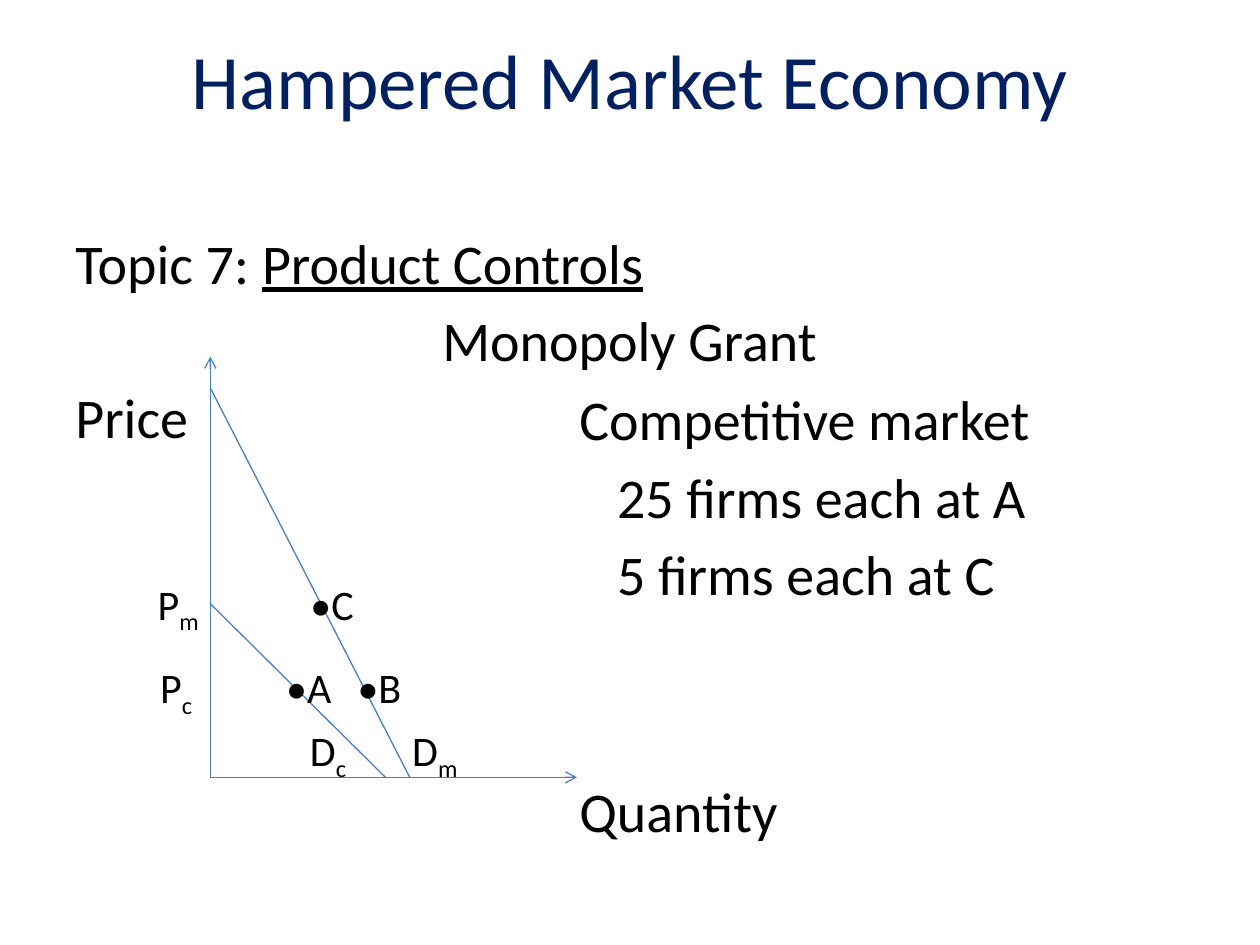
import pptx
import pptx.util
import pptx.dml.color
import pptx.enum.text
import pptx.enum.shapes
import pptx.oxml.ns
import lxml.etree

Cm, Pt = pptx.util.Cm, pptx.util.Pt
ALIGN = pptx.enum.text.PP_ALIGN
ANCHOR = pptx.enum.text.MSO_ANCHOR
NAVY, BLACK, BLUE = "002060", "000000", "4B7EBC"

TITLE = "Hampered Market Economy"
LEFT, TAB, TOP, ROW, WIDE = 1.52, 11.68, 4.6, 1.58, 22.35
BLOCKS = [
    (LEFT, 0, WIDE, [
        ([("Topic 7: ", {}), ("Product Controls", {"underline": True})], {}),
        ([("Monopoly Grant", {})], {"alignment": ALIGN.CENTER}),
        ([("Price", {})], {}),
    ]),
    (TAB, 2, 12, [
        ([("Competitive market", {})], {}),
        ([("25 firms each at A", {})], {"indent": 0.76}),
        ([("5 firms each at C", {})], {"indent": 0.76}),
    ]),
    (TAB, 7, 6, [([("Quantity", {})], {})]),
]

BASE, PRICE, END = 15.67, 4.24, 11.63
LINES = [
    ((PRICE, BASE), (PRICE, 7.19), True),
    ((PRICE, BASE), (END, BASE), True),
    ((PRICE, 12.17), (7.77, BASE), False),
    ((PRICE, 7.82), (8.26, BASE), False),
]
MARKS = [
    (3.18, 11.66, "P", "m"), (6.26, 11.66, "•C", ""),
    (3.23, 13.34, "P", "c"), (5.77, 13.34, "•A", ""), (7.21, 13.34, "•B", ""),
    (6.25, 14.61, "D", "c"), (8.31, 14.61, "D", "m"),
]


def tint(text):
    return pptx.dml.color.RGBColor.from_string(text)


def style(item, **values):
    for name, value in values.items():
        setattr(item, name, value)


def add(node, tag, **values):
    lxml.etree.SubElement(node, pptx.oxml.ns.qn(tag), **values)


def write(para, text, size, color=BLACK, **look):
    run = para.add_run()
    run.text = text
    style(run.font, name="Calibri", size=Pt(size), **look)
    run.font.color.rgb = tint(color)
    return run


def frame(slide, x, y, w, h):
    body = slide.shapes.add_textbox(Cm(x), Cm(y), Cm(w), Cm(h)).text_frame
    style(body, word_wrap=True, margin_left=0, margin_right=0,
          margin_top=0, margin_bottom=0)
    return body


def block(slide, x, row, w, rows):
    body = frame(slide, x, TOP + row * ROW, w, len(rows) * ROW)
    for i, (runs, form) in enumerate(rows):
        para = body.add_paragraph() if i else body.paragraphs[0]
        style(para, space_before=Pt(5.8), alignment=form.get("alignment", ALIGN.LEFT))
        if "indent" in form:
            para._p.get_or_add_pPr().set("marL", str(Cm(form["indent"])))
        for text, look in runs:
            write(para, text, 32, **look)


def mark(slide, x, y, text, sub):
    para = frame(slide, x, y, 1.2, 1.1).paragraphs[0]
    write(para, text, 24)
    if sub:
        low = write(para, sub, 24)
        low._r.get_or_add_rPr().set("baseline", "-25000")


def line(slide, start, end, arrow):
    kind = pptx.enum.shapes.MSO_CONNECTOR.STRAIGHT
    link = slide.shapes.add_connector(kind, *map(Cm, start + end))
    link.line.color.rgb = tint(BLUE)
    link.line.width = Pt(0.75)
    props = link._element.spPr
    if arrow:
        add(props.find(pptx.oxml.ns.qn("a:ln")), "a:tailEnd", type="arrow")
    add(props, "a:effectLst")


def main():
    deck = pptx.Presentation()
    style(deck, slide_width=Cm(25.4), slide_height=Cm(19.05))
    slide = deck.slides.add_slide(deck.slide_layouts[5])
    head = slide.shapes.title
    style(head, left=0, top=0, width=Cm(25.4), height=Cm(3.18))
    head.text_frame.vertical_anchor = ANCHOR.MIDDLE
    para = head.text_frame.paragraphs[0]
    para.alignment = ALIGN.CENTER
    write(para, TITLE, 44, NAVY)
    for draw, parts in ((block, BLOCKS), (line, LINES), (mark, MARKS)):
        for part in parts:
            draw(slide, *part)
    deck.save("out.pptx")


if __name__ == "__main__":
    main()
